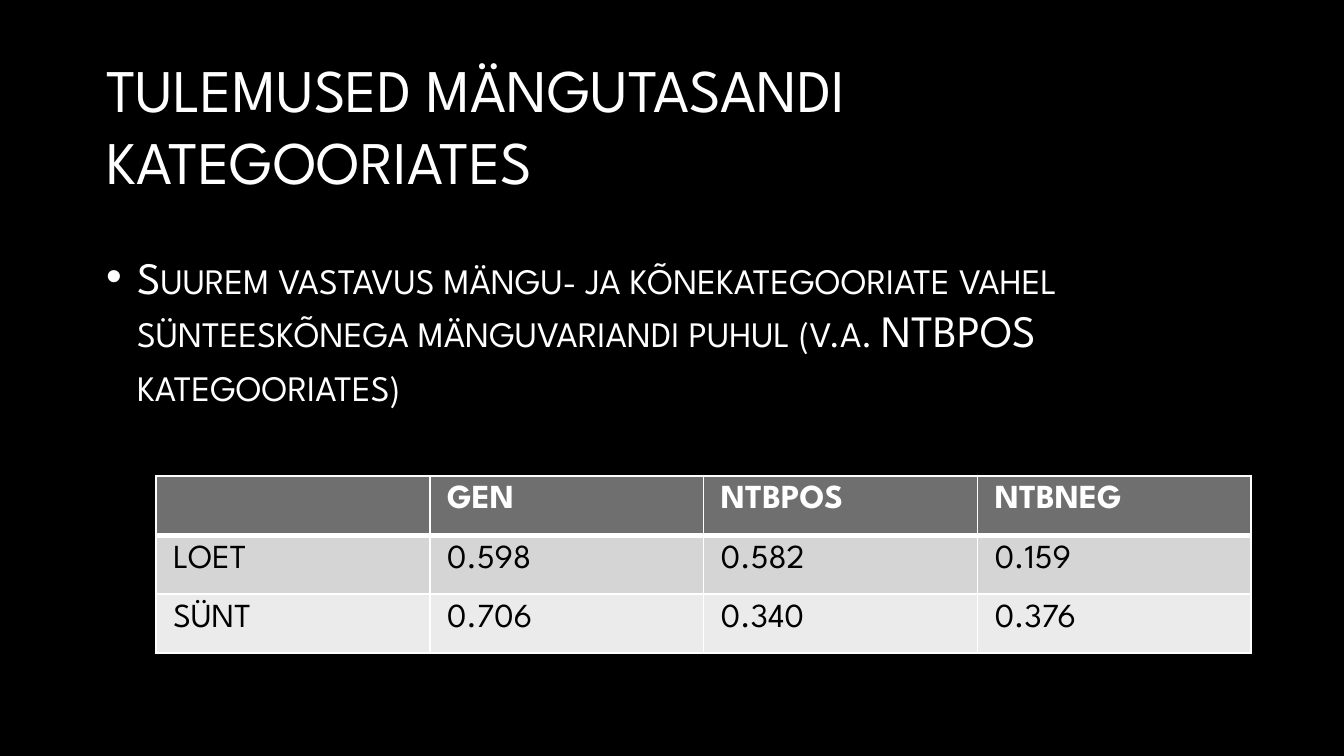
import pptx
import pptx.dml.color
import pptx.enum.text
import pptx.oxml
import pptx.oxml.ns
import pptx.util
from pptx.util import Inches, Pt

TITLE = "TULEMUSED MÄNGUTASANDI KATEGOORIATES"
BULLET = ("Suurem vastavus mängu- ja kõnekategooriate vahel sünteeskõnega "
          "mänguvariandi puhul (v.a. NTBPOS kategooriates)")
ROWS = [
    ("", "GEN", "NTBPOS", "NTBNEG"),
    ("LOET", "0.598", "0.582", "0.159"),
    ("SÜNT", "0.706", "0.340", "0.376"),
]
COLORS = {"back": "000000", "light": "FFFFFF", "dark": "000000"}
ROW_FILLS = ["6F6F6F", "D5D5D5", "EBEBEB"]
FONT = "League Spartan"

TITLE_BOX = (0.69, 0.51, 8.62, 0.83)
BODY_BOX = (0.69, 1.82, 8.62, 1.27)
TABLE_BOX = (1.16, 3.54, 8.15, 1.31)
INDENT = Inches(0.23)
CELL_FORMAT = {
    "margin_left": Inches(0.13), "margin_right": Inches(0.13),
    "margin_top": Inches(0.07), "margin_bottom": Inches(0.07),
    "vertical_anchor": pptx.enum.text.MSO_ANCHOR.TOP,
}
FRAME_FORMAT = {
    "word_wrap": True,
    "auto_size": pptx.enum.text.MSO_AUTO_SIZE.NONE,
    "vertical_anchor": pptx.enum.text.MSO_ANCHOR.MIDDLE,
}


def rgb(value):
    return pptx.dml.color.RGBColor.from_string(value)


def set_attributes(obj, values):
    for name, value in values.items():
        setattr(obj, name, value)


def add_run(p, text, size, color, bold=False):
    r = p.add_run()
    r.text = text
    set_attributes(r.font, {"name": FONT, "size": Pt(size), "bold": bold})
    r.font.color.rgb = rgb(color)
    return r


def fill_placeholder(sp, box, text, size):
    """Move a placeholder and write one left-aligned paragraph in it."""
    set_attributes(sp, dict(zip(("left", "top", "width", "height"), map(Inches, box))))
    set_attributes(sp.text_frame, FRAME_FORMAT)
    p = sp.text_frame.paragraphs[0]
    p.alignment = pptx.enum.text.PP_ALIGN.LEFT
    return p, add_run(p, text, size, COLORS["light"])


def add_bullet(p, color):
    pPr = p._p.get_or_add_pPr()
    pPr.set("marL", str(INDENT))
    pPr.set("indent", str(-INDENT))
    ns = pptx.oxml.ns.nsdecls("a")
    for xml in (f'<a:buClr {ns}><a:srgbClr val="{color}"/></a:buClr>',
                f'<a:buFont {ns} typeface="Arial"/>',
                f'<a:buChar {ns} char="•"/>'):
        pPr.append(pptx.oxml.parse_xml(xml))


def add_borders(cell, widths):
    """Draw the cell's borders; must run before its fill is set."""
    tcPr = cell._tc.get_or_add_tcPr()
    for side, width in widths.items():
        tcPr.append(pptx.oxml.parse_xml(
            f'<a:ln{side} {pptx.oxml.ns.nsdecls("a")} w="{Pt(width)}">'
            f'<a:solidFill><a:srgbClr val="{COLORS["light"]}"/></a:solidFill></a:ln{side}>'))


def add_results_table(slide):
    table = slide.shapes.add_table(len(ROWS), len(ROWS[0]), *map(Inches, TABLE_BOX)).table
    for i, row in enumerate(ROWS):
        header = i == 0
        widths = {"L": 1, "R": 1, "T": 3 if i == 1 else 1, "B": 3 if header else 1}
        for j, text in enumerate(row):
            cell = table.cell(i, j)
            set_attributes(cell, CELL_FORMAT)
            add_borders(cell, widths)
            cell.fill.solid()
            cell.fill.fore_color.rgb = rgb(ROW_FILLS[i])
            if text:
                add_run(cell.text_frame.paragraphs[0], text, 18,
                        COLORS["light" if header else "dark"], header)


def main():
    prs = pptx.Presentation()
    prs.slide_width = Inches(10)
    prs.slide_height = prs.slide_width * 9 // 16
    s = prs.slides.add_slide(prs.slide_layouts[1])
    s.background.fill.solid()
    s.background.fill.fore_color.rgb = rgb(COLORS["back"])

    fill_placeholder(s.shapes.title, TITLE_BOX, TITLE, 32.4)
    p, r = fill_placeholder(s.placeholders[1], BODY_BOX, BULLET, 24)
    set_attributes(p, {"space_before": Pt(0), "space_after": Pt(4.5)})
    add_bullet(p, COLORS["light"])
    r.font._element.set("cap", "small")

    add_results_table(s)
    prs.save("out.pptx")


if __name__ == "__main__":
    main()
